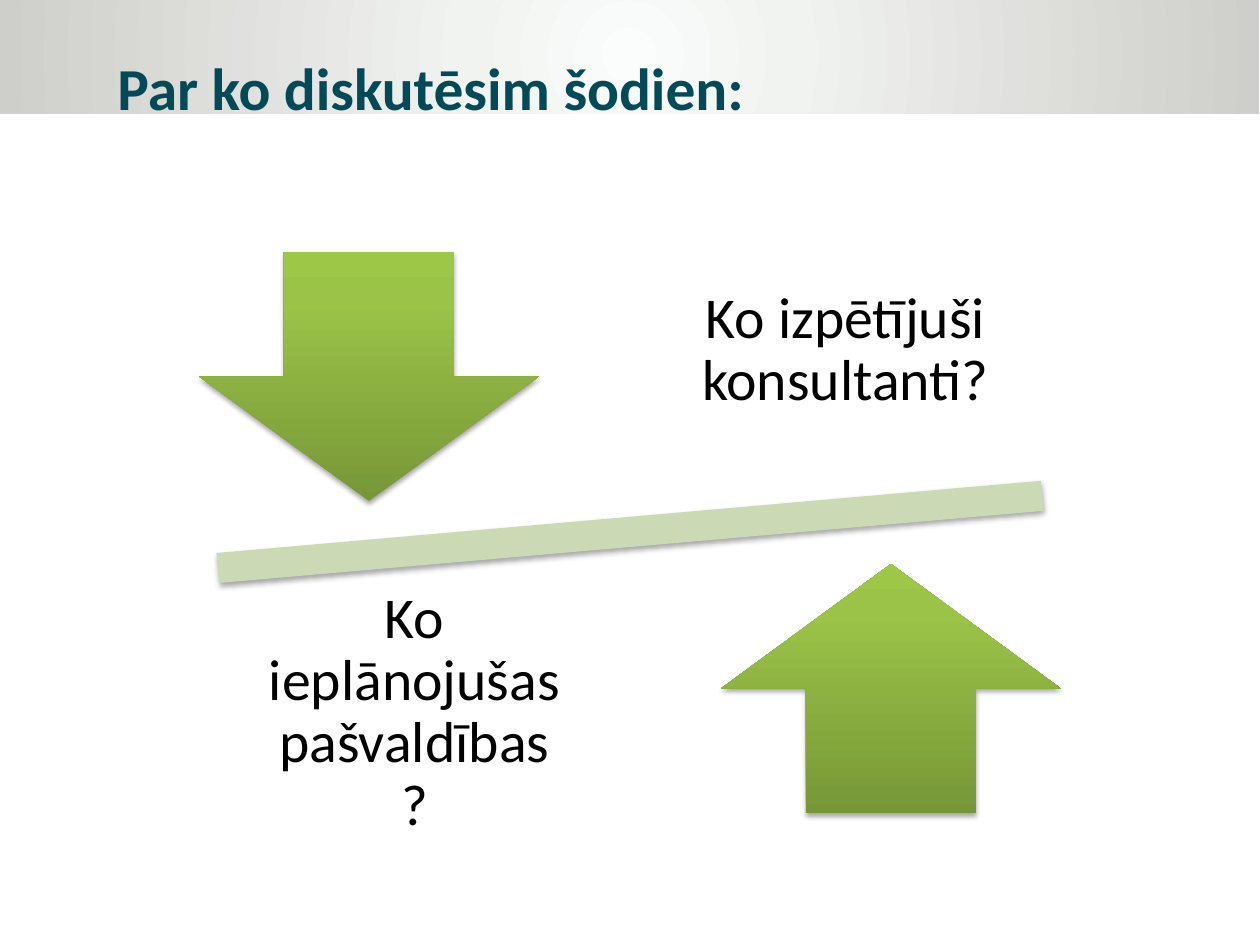
from lxml import etree
from pptx import Presentation
from pptx import util as u
from pptx.dml.color import RGBColor
from pptx.enum import shapes, text
from pptx.oxml import ns

PX = 914400 / 126
FONT = "Calibri"
TEAL = RGBColor(0x03, 0x4A, 0x58)
BLACK = RGBColor(0x00, 0x00, 0x00)
PALE_GREEN = RGBColor(0xCB, 0xDA, 0xB5)
BAND_STOPS = [
    (0, RGBColor(0xFB, 0xFC, 0xFC)),
    (26, RGBColor(0xF1, 0xF3, 0xF1)),
    (100, RGBColor(0xCE, 0xCE, 0xCA)),
]
GREEN_STOPS = [
    (0, RGBColor(0x77, 0x97, 0x37)),
    (80, RGBColor(0x9B, 0xC3, 0x48)),
    (100, RGBColor(0x9D, 0xC7, 0x46)),
]


def px(n):
    return u.Emu(round(n * PX))


def add_node(parent, tag, **attrs):
    node = etree.SubElement(parent, ns.qn(tag))
    for name, value in attrs.items():
        node.set(name, str(value))
    return node


def set_gradient(sp, stops, radial=False):
    sp.fill.gradient()
    grad = sp.element.spPr.find(ns.qn("a:gradFill"))
    for child in list(grad):
        grad.remove(child)
    stop_list = add_node(grad, "a:gsLst")
    for percent, color in stops:
        stop = add_node(stop_list, "a:gs", pos=percent * 1000)
        add_node(stop, "a:srgbClr", val=color)
    if radial:
        shade = add_node(grad, "a:path")
        shade.set("path", "circle")
        add_node(shade, "a:fillToRect", l=50000, t=50000, r=50000, b=50000)
    else:
        add_node(grad, "a:lin", ang=270 * 60000, scaled=0)


def set_shadow(sp):
    effects = sp.element.spPr.find(ns.qn("a:effectLst"))
    shadow = add_node(effects, "a:outerShdw", blurRad=u.Pt(3.1), dist=u.Pt(1.8),
                      dir=90 * 60000, rotWithShape=0)
    color = add_node(shadow, "a:srgbClr", val="000000")
    add_node(color, "a:alpha", val=35000)


def add_shape(s, kind, x, y, w, h):
    sp = s.shapes.add_shape(kind, px(x), px(y), px(w), px(h))
    sp.shadow.inherit = False
    sp.line.fill.background()
    return sp


def add_band(s):
    sp = add_shape(s, shapes.MSO_SHAPE.RECTANGLE, 0, -4, 1259, 118)
    set_gradient(sp, BAND_STOPS, radial=True)


def add_beam(s):
    sp = add_shape(s, shapes.MSO_SHAPE.MATH_MINUS, 67, 468, 1126, 128)
    sp.rotation = 355
    sp.fill.solid()
    sp.fill.fore_color.rgb = PALE_GREEN
    set_shadow(sp)


def add_arrow(s, kind, x, y):
    sp = add_shape(s, kind, x, y, 340, 249)
    set_gradient(sp, GREEN_STOPS)
    set_shadow(sp)


def add_text(s, content, x, y, w, h, size, color):
    sp = s.shapes.add_textbox(px(x), px(y), px(w), px(h))
    tf = sp.text_frame
    tf.word_wrap = True
    p = tf.paragraphs[0]
    p.text = content
    p.font.name = FONT
    p.font.size = u.Pt(size)
    p.font.color.rgb = color
    return tf


def add_title(s, content):
    tf = add_text(s, content, 105, 45, 893, 84, 34, TEAL)
    tf.paragraphs[0].font.bold = True


def add_question(s, content, x, y):
    tf = add_text(s, content, x, y, 363, 262, 33, BLACK)
    tf.vertical_anchor = text.MSO_ANCHOR.MIDDLE
    tf.margin_left = tf.margin_right = tf.margin_top = tf.margin_bottom = px(33)
    p = tf.paragraphs[0]
    p.alignment = text.PP_ALIGN.CENTER
    p.line_spacing = 0.9


def main():
    prs = Presentation()
    prs.slide_width, prs.slide_height = px(1260), px(945)
    s = prs.slides.add_slide(prs.slide_layouts[6])
    add_band(s)
    add_title(s, "Par ko diskutēsim šodien:")
    add_beam(s)
    add_arrow(s, shapes.MSO_SHAPE.DOWN_ARROW, 199, 252)
    add_question(s, "Ko izpētījuši konsultanti?", 664, 220)
    add_arrow(s, shapes.MSO_SHAPE.UP_ARROW, 721, 564)
    add_question(s, "Ko ieplānojušas pašvaldības?", 233, 582)
    prs.save("out.pptx")


if __name__ == "__main__":
    main()
